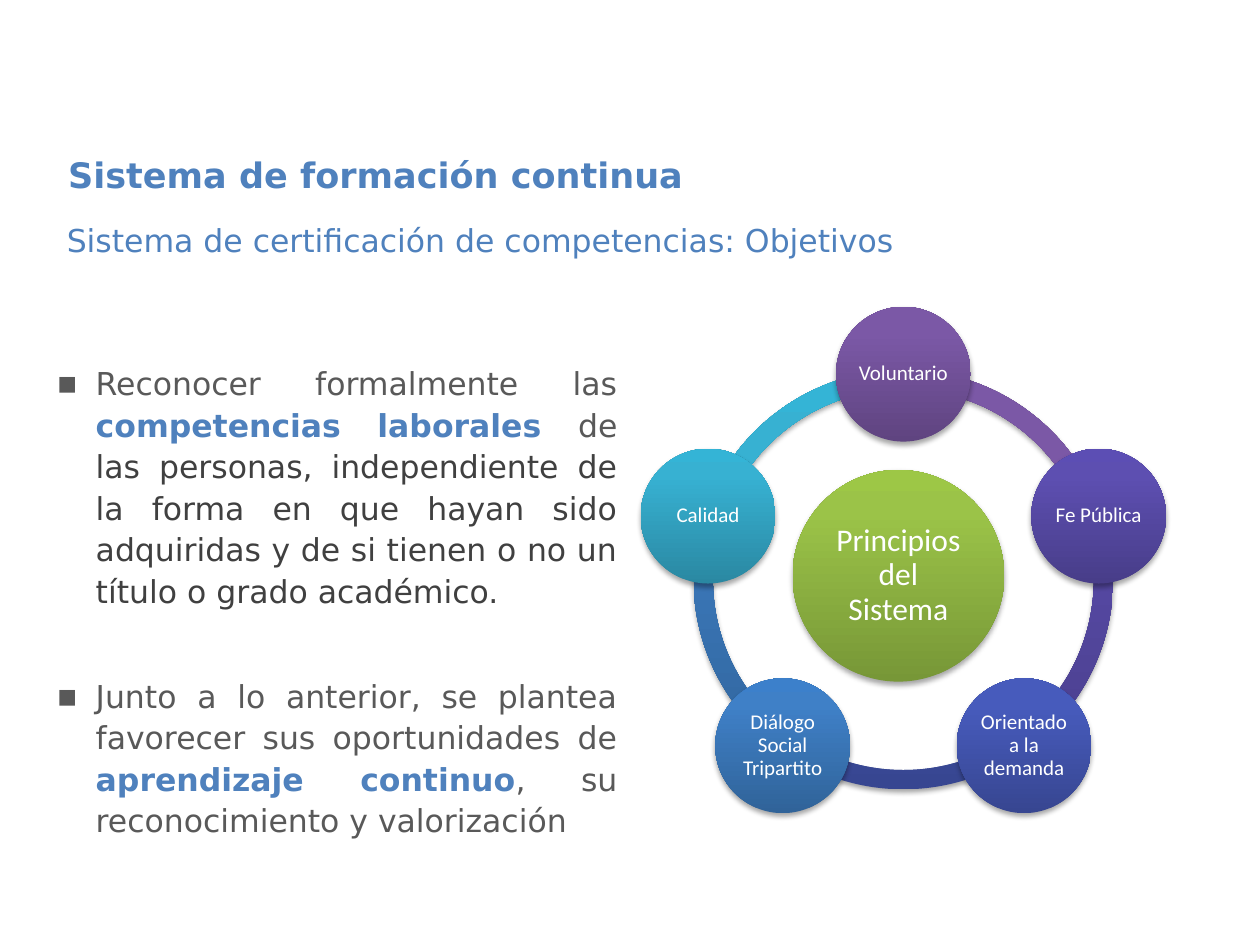
from math import cos, radians, sin

from lxml.etree import SubElement
from pptx import Presentation
from pptx.dml.color import RGBColor
from pptx.enum.shapes import MSO_SHAPE
from pptx.enum.text import MSO_ANCHOR, MSO_AUTO_SIZE, PP_ALIGN
from pptx.oxml.ns import qn
from pptx.util import Inches, Pt

# Content
TITLE = "Sistema de formación continua"
SUBTITLE = "Sistema de certificación de competencias: Objetivos"
OBJECTIVES = [
    [("Reconocer formalmente las ", "gray"),
     ("competencias laborales ", "accent"),
     ("de ", "gray"),
     ("las personas, independiente de la forma en que hayan sido adquiridas "
      "y de si tienen o no un título o grado académico.", "dark")],
    [("Junto a lo anterior, se plantea favorecer sus oportunidades de ", "gray"),
     ("aprendizaje continuo", "accent"),
     (", su reconocimiento y valorización", "gray")],
]
CENTER_LABEL = "Principios del Sistema"
PRINCIPLES = [  # clockwise from the top, with gradient name
    ("Voluntario", "purple"),
    ("Fe Pública", "violet"),
    ("Orientado a la demanda", "indigo"),
    ("Diálogo Social Tripartito", "blue"),
    ("Calidad", "cyan"),
]

COLORS = {"accent": "4F81BD", "gray": "595959", "dark": "404040",
          "white": "FFFFFF", "shadow": "000000"}
GRADIENTS = {  # bottom, near the top, top
    "green": ("779737", "9BC348", "9DC746"),
    "purple": ("5F4480", "7B58A6", "7C57A8"),
    "violet": ("483D89", "5D4FB1", "5C4EB4"),
    "indigo": ("374691", "475BBC", "455ABF"),
    "blue": ("306399", "3F80C7", "3C80CB"),
    "cyan": ("2A88A2", "37B1D2", "34B4D6"),
}
STOPS = (0, 80, 100)
TEXT_FONT, DIAGRAM_FONT = "DejaVu Sans", "Calibri"

# Wheel geometry in inches
RING_CENTER, RING_SIZE = (7.17, 4.6), 3.33
ORBIT_RADIUS, NODE_SIZE = 1.63, 1.07
HUB_CENTER, HUB_SIZE = (7.13, 4.57), 1.68


def style_font(font, name, size, color, bold=False):
    font.name, font.size, font.bold = name, Pt(size), bold
    font.color.rgb = RGBColor.from_string(COLORS[color])


def place_placeholder(placeholder, left, top, width, height):
    placeholder.left, placeholder.top = Inches(left), Inches(top)
    placeholder.width, placeholder.height = Inches(width), Inches(height)
    frame = placeholder.text_frame
    frame.word_wrap = True
    frame.auto_size = MSO_AUTO_SIZE.NONE
    frame.vertical_anchor = MSO_ANCHOR.TOP
    return frame


def set_bullet(paragraph, character=None):
    properties = paragraph._p.get_or_add_pPr()
    indent = Inches(0.31) if character else 0
    properties.set("marL", str(indent))
    properties.set("indent", str(-indent))
    if character:
        SubElement(properties, qn("a:buFont"), typeface=TEXT_FONT)
        SubElement(properties, qn("a:buChar"), char=character)
    else:
        SubElement(properties, qn("a:buNone"))


def add_heading(placeholder, text, box, size, bold):
    frame = place_placeholder(placeholder, *box)
    frame.text = text
    paragraph = frame.paragraphs[0]
    set_bullet(paragraph)
    paragraph.alignment = PP_ALIGN.LEFT
    paragraph.space_before = Pt(0)
    style_font(paragraph.runs[0].font, TEXT_FONT, size, "accent", bold)


def add_objectives(placeholder):
    frame = place_placeholder(placeholder, 0.35, 2.81, 4.65, 3.95)
    for index, pieces in enumerate(OBJECTIVES):
        paragraph = frame.add_paragraph() if index else frame.paragraphs[0]
        set_bullet(paragraph, "▪")
        paragraph.alignment = PP_ALIGN.JUSTIFY
        paragraph.line_spacing = 1.1
        paragraph.space_before = Pt(30 if index else 0)
        paragraph.space_after = Pt(6)
        for text, color in pieces:
            run = paragraph.add_run()
            run.text = text
            style_font(run.font, TEXT_FONT, 18, color, color == "accent")


def add_wheel_shape(slide, kind, center, size, gradient):
    left, top = (Inches(value - size / 2) for value in center)
    shape = slide.shapes.add_shape(kind, left, top, Inches(size), Inches(size))
    shape.line.fill.background()
    shape.fill.gradient()
    shape.fill.gradient_angle = 90
    properties = shape._element.spPr
    stop_list = properties.find(qn("a:gradFill")).find(qn("a:gsLst"))
    for stop in list(stop_list):
        stop_list.remove(stop)
    for position, color in zip(STOPS, GRADIENTS[gradient]):
        stop = SubElement(stop_list, qn("a:gs"), pos=str(position * 1000))
        SubElement(stop, qn("a:srgbClr"), val=color)
    # Soft shadow straight below
    shape.shadow.inherit = False
    shadow = SubElement(properties.find(qn("a:effectLst")), qn("a:outerShdw"),
                        blurRad=str(Pt(3.1)), dist=str(Pt(1.8)),
                        dir="5400000", rotWithShape="0")
    color = SubElement(shadow, qn("a:srgbClr"), val=COLORS["shadow"])
    SubElement(color, qn("a:alpha"), val="35000")
    return shape


def add_circle(slide, label, center, size, gradient, font_size, inset):
    shape = add_wheel_shape(slide, MSO_SHAPE.OVAL, center, size, gradient)
    frame = shape.text_frame
    frame.word_wrap = True
    frame.vertical_anchor = MSO_ANCHOR.MIDDLE
    frame.margin_left = frame.margin_right = Inches(inset)
    frame.margin_top = frame.margin_bottom = Inches(inset)
    frame.text = label
    paragraph = frame.paragraphs[0]
    paragraph.alignment = PP_ALIGN.CENTER
    paragraph.line_spacing = 0.9
    style_font(paragraph.runs[0].font, DIAGRAM_FONT, font_size, "white")


def add_wheel(slide):
    step = 360 / len(PRINCIPLES)
    angles = [(270 + step * index) % 360 for index in range(len(PRINCIPLES))]
    # Ring segments, each from its principle to the next
    for (label, gradient), angle in reversed(list(zip(PRINCIPLES, angles))):
        arc = add_wheel_shape(slide, MSO_SHAPE.BLOCK_ARC, RING_CENTER, RING_SIZE, gradient)
        arc.adjustments[0] = angle * 0.6  # 60000ths of a degree over 100000
        arc.adjustments[1] = (angle + step) % 360 * 0.6
        arc.adjustments[2] = 0.046
    # Hub and principles
    add_circle(slide, CENTER_LABEL, HUB_CENTER, HUB_SIZE, "green", 18, 0.03)
    for (label, gradient), angle in zip(PRINCIPLES, angles):
        center = (RING_CENTER[0] + ORBIT_RADIUS * cos(radians(angle)),
                  RING_CENTER[1] + ORBIT_RADIUS * sin(radians(angle)))
        add_circle(slide, label, center, NODE_SIZE, gradient, 12, 0.02)


def main():
    presentation = Presentation()
    presentation.slide_width, presentation.slide_height = Inches(10), Inches(7.5)
    slide = presentation.slides.add_slide(presentation.slide_layouts[3])
    title, subtitle, body = list(slide.placeholders)[:3]
    add_heading(title, TITLE, (0.44, 1.17, 9.11, 0.82), 20, True)
    add_heading(subtitle, SUBTITLE, (0.43, 1.7, 9.11, 0.55), 18, False)
    add_objectives(body)
    add_wheel(slide)
    presentation.save("out.pptx")


if __name__ == "__main__":
    main()
